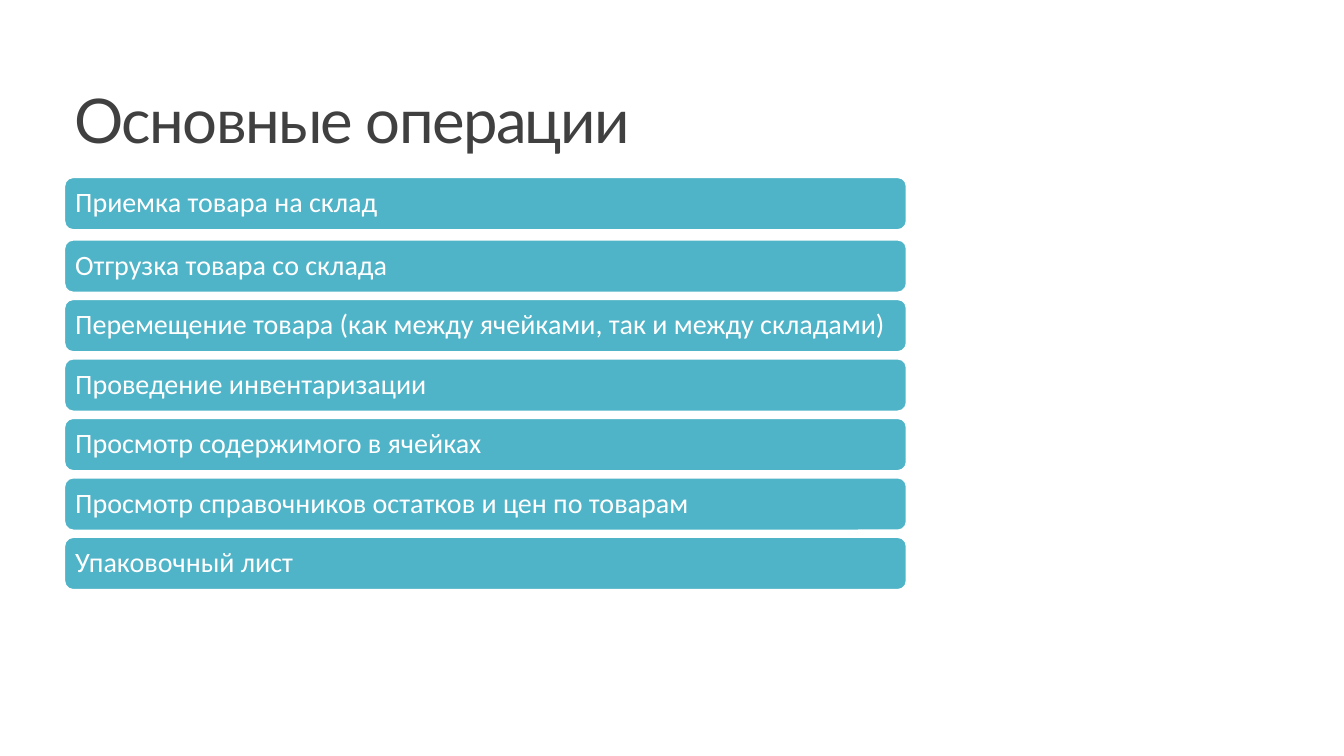
from dataclasses import dataclass

from pptx import Presentation
from pptx import util as u
from pptx.dml.color import RGBColor
from pptx.enum import shapes, text

COLORS = {"title": "404040", "bar": "50B4C8", "white": "FFFFFF"}

BAR_LEFT, BAR_WIDTH, BAR_HEIGHT = 0.64, 8.35, 0.52
FIRST_TOP, SECOND_TOP, BAR_STEP = 1.76, 2.38, 0.59
BAR_INSET = 0.08

OPERATIONS = [
    "Приемка товара на склад",
    "Отгрузка товара со склада",
    "Перемещение товара (как между ячейками, так и между складами)",
    "Проведение инвентаризации",
    "Просмотр содержимого в ячейках",
    "Просмотр справочников остатков и цен по товарам",
    "Упаковочный лист",
]


@dataclass
class OperationBar:
    label: str
    top: float


@dataclass
class TextStyle:
    font: str
    size: int
    color: str
    line_spacing: float


TITLE_STYLE = TextStyle("Lato", 44, "title", 0.85)
BAR_STYLE = TextStyle("Calibri", 20, "white", 0.9)


def color(name: str) -> RGBColor:
    return RGBColor.from_string(COLORS[name])


def write_line(frame, content: str, style: TextStyle):
    """Write one left-aligned, vertically centred line and return its run."""
    frame.word_wrap = True
    frame.auto_size = text.MSO_AUTO_SIZE.NONE
    frame.vertical_anchor = text.MSO_ANCHOR.MIDDLE
    paragraph = frame.paragraphs[0]
    paragraph.alignment = text.PP_ALIGN.LEFT
    paragraph.line_spacing = style.line_spacing
    run = paragraph.add_run()
    run.text = content
    run.font.name = style.font
    run.font.size = u.Pt(style.size)
    run.font.color.rgb = color(style.color)
    return run


def add_title(slide, content: str) -> None:
    title = slide.shapes.title
    title.left, title.top = u.Inches(0.64), u.Inches(0.73)
    title.width, title.height = u.Inches(12.06), u.Inches(1.01)
    run = write_line(title.text_frame, content, TITLE_STYLE)
    # Tighter letter spacing, in hundredths of a point
    run.font._element.set("spc", "-120")


def add_bar(slide, bar: OperationBar) -> None:
    shape = slide.shapes.add_shape(
        shapes.MSO_SHAPE.ROUNDED_RECTANGLE,
        u.Inches(BAR_LEFT), u.Inches(bar.top),
        u.Inches(BAR_WIDTH), u.Inches(BAR_HEIGHT),
    )
    shape.shadow.inherit = False
    shape.fill.solid()
    shape.fill.fore_color.rgb = color("bar")
    shape.line.color.rgb = color("white")
    shape.line.width = u.Pt(1)
    frame = shape.text_frame
    frame.margin_left = frame.margin_right = u.Inches(BAR_INSET)
    frame.margin_top = frame.margin_bottom = u.Inches(BAR_INSET)
    write_line(frame, bar.label, BAR_STYLE)


def main() -> None:
    presentation = Presentation()
    presentation.slide_width = u.Inches(13.33)
    presentation.slide_height = u.Inches(7.5)
    slide = presentation.slides.add_slide(presentation.slide_layouts.get_by_name("Title Only"))

    # Heading
    add_title(slide, "Основные операции")

    # Operations: the first bar stands slightly apart, the rest are evenly spaced
    first, *others = OPERATIONS
    bars = [OperationBar(first, FIRST_TOP)]
    bars += [OperationBar(label, SECOND_TOP + i * BAR_STEP) for i, label in enumerate(others)]
    for bar in bars:
        add_bar(slide, bar)

    presentation.save("out.pptx")


if __name__ == "__main__":
    main()
